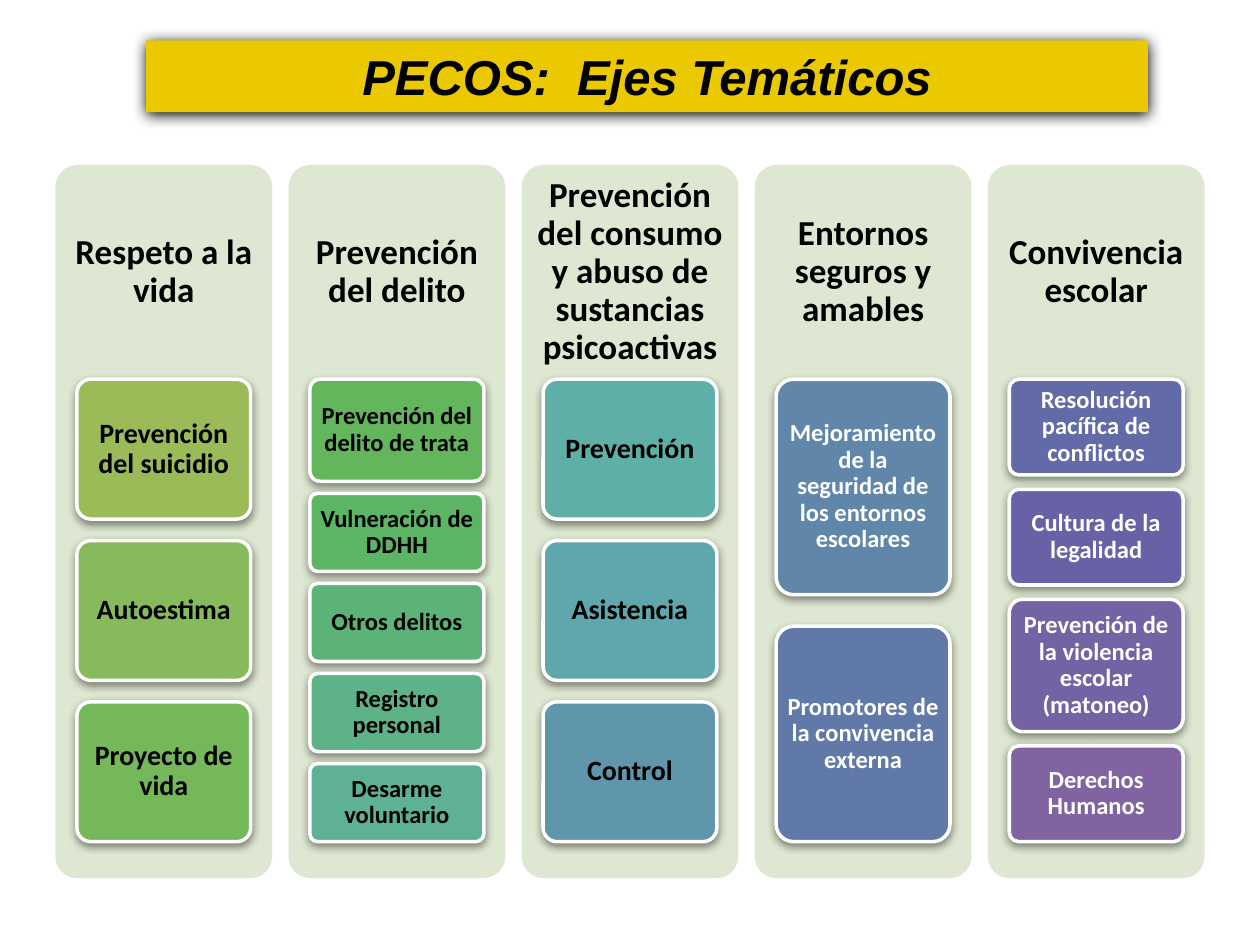
from lxml import etree
from pptx import Presentation
from pptx.dml.color import RGBColor
from pptx.enum.shapes import MSO_SHAPE as Shape
from pptx.enum.text import MSO_ANCHOR as Anchor, PP_ALIGN as Align
from pptx.oxml.ns import qn
from pptx.util import Inches, Pt


def rgb(value):
    return RGBColor.from_string(value)


def write(box, words, size, color, font="Calibri", spacing=0.9, margins=(0.04, 0.03)):
    frame = box.text_frame
    frame.word_wrap = True
    frame.vertical_anchor = Anchor.MIDDLE
    frame.margin_left = frame.margin_right = Inches(margins[0])
    frame.margin_top = frame.margin_bottom = Inches(margins[1])
    paragraph = frame.paragraphs[0]
    paragraph.alignment = Align.CENTER
    paragraph.line_spacing = spacing
    run = paragraph.add_run()
    run.text = words
    run.font.name = font
    run.font.size = Pt(size)
    run.font.bold = True
    run.font.color.rgb = rgb(color)
    return run


prs = Presentation()
prs.slide_width, prs.slide_height = Inches(10), Inches(7.5)
slide = prs.slides.add_slide(prs.slide_layouts[6])
shapes = slide.shapes

BLACK, WHITE = "000000", "FFFFFF"
COLUMN_LEFT, COLUMN_TOP, COLUMN_STEP = 0.44, 1.31, 1.85
COLUMN_WIDTH, COLUMN_HEIGHT, HEADING_HEIGHT = 1.72, 5.66, 1.7
CARD_TOP, CARD_BOTTOM, CARD_WIDTH = 3.01, 6.68, 1.38

# Each axis: heading, card text size and colour, cards (text, height, fill)
axes = [
    ("Respeto a la vida", 16, BLACK, [
        ("Prevención del suicidio", 1.11, "9BBB59"),
        ("Autoestima", 1.11, "87BA5A"),
        ("Proyecto de vida", 1.11, "75B85A")]),
    ("Prevención del delito", 14, BLACK, [
        ("Prevención del delito de trata", 0.81, "63B65B"),
        ("Vulneración de DDHH", 0.62, "5CB565"),
        ("Otros delitos", 0.62, "5CB377"),
        ("Registro personal", 0.62, "5DB287"),
        ("Desarme voluntario", 0.62, "5EB097")]),
    ("Prevención del consumo y abuso de sustancias psicoactivas", 16, BLACK, [
        ("Prevención", 1.11, "5EAFA6"),
        ("Asistencia", 1.11, "5FA7AD"),
        ("Control", 1.11, "6096AC")]),
    ("Entornos seguros y amables", 14, WHITE, [
        ("Mejoramiento de la seguridad de los entornos escolares", 1.71, "6087AA"),
        ("Promotores de la convivencia externa", 1.71, "6179A8")]),
    ("Convivencia escolar", 14, WHITE, [
        ("Resolución pacífica de conflictos", 0.76, "626BA7"),
        ("Cultura de la legalidad", 0.76, "6762A5"),
        ("Prevención de la violencia escolar (matoneo)", 1.05, "7463A4"),
        ("Derechos Humanos", 0.76, "8064A2")]),
]
shadowed = []  # (shape, blur, distance, opacity in percent)

# Columns with a heading and evenly spaced cards
for index, (axis, size, color, cards) in enumerate(axes):
    left = COLUMN_LEFT + index * COLUMN_STEP
    column = shapes.add_shape(Shape.ROUNDED_RECTANGLE, Inches(left), Inches(COLUMN_TOP),
                              Inches(COLUMN_WIDTH), Inches(COLUMN_HEIGHT))
    column.adjustments[0] = 0.1
    column.fill.solid()
    column.fill.fore_color.rgb = rgb("DEE7D1")
    column.line.fill.background()
    column.shadow.inherit = False

    heading = shapes.add_textbox(Inches(left), Inches(COLUMN_TOP),
                                 Inches(COLUMN_WIDTH), Inches(HEADING_HEIGHT))
    write(heading, axis, 20, BLACK, margins=(0.08, 0.08))

    free = CARD_BOTTOM - CARD_TOP - sum(height for _, height, _ in cards)
    gap = free / (len(cards) - 1)
    top = CARD_TOP
    for topic, height, fill in cards:
        card = shapes.add_shape(Shape.ROUNDED_RECTANGLE,
                                Inches(left + (COLUMN_WIDTH - CARD_WIDTH) / 2), Inches(top),
                                Inches(CARD_WIDTH), Inches(height))
        card.adjustments[0] = 0.1
        card.fill.solid()
        card.fill.fore_color.rgb = rgb(fill)
        card.line.color.rgb = rgb(WHITE)
        card.line.width = Pt(2)
        write(card, topic, size, color)
        shadowed.append((card, 5, 2, 43))
        top += height + gap

# Title banner
banner = shapes.add_shape(Shape.RECTANGLE, Inches(1.16), Inches(0.32),
                          Inches(7.95), Inches(0.57))
banner.fill.solid()
banner.fill.fore_color.rgb = rgb("EAC900")
banner.line.fill.background()
title = write(banner, "PECOS:  Ejes Temáticos", 28, BLACK, "Arial", 1.0, (0.1, 0.05))
title.font.italic = True
shadowed.append((banner, 8.5, 1, 100))

# Downward shadows
for shape, blur, distance, opacity in shadowed:
    shape.shadow.inherit = False
    effects = shape._element.spPr.find(qn("a:effectLst"))
    outer = etree.SubElement(effects, qn("a:outerShdw"), blurRad=str(Pt(blur)),
                             dist=str(Pt(distance)), dir="5400000", rotWithShape="0")
    tint = etree.SubElement(outer, qn("a:srgbClr"), val=BLACK)
    etree.SubElement(tint, qn("a:alpha"), val=str(opacity * 1000))

prs.save("out.pptx")
